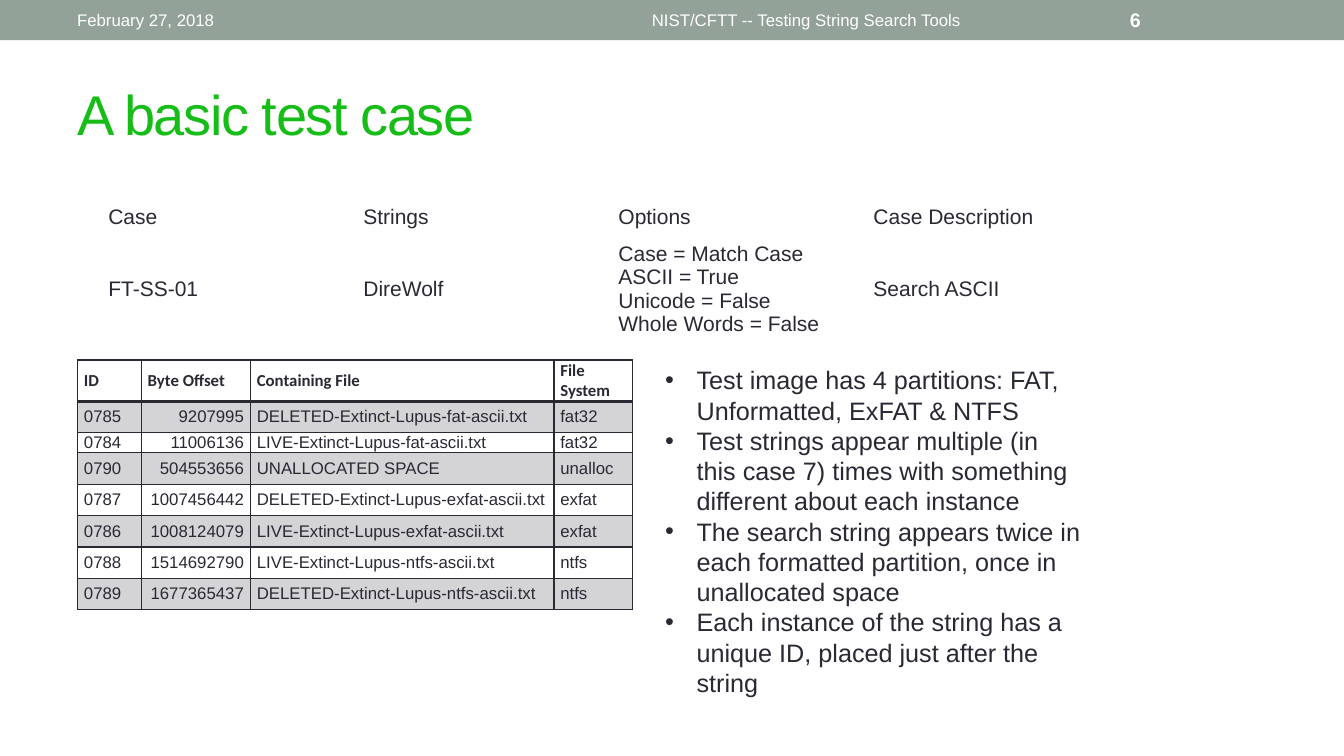
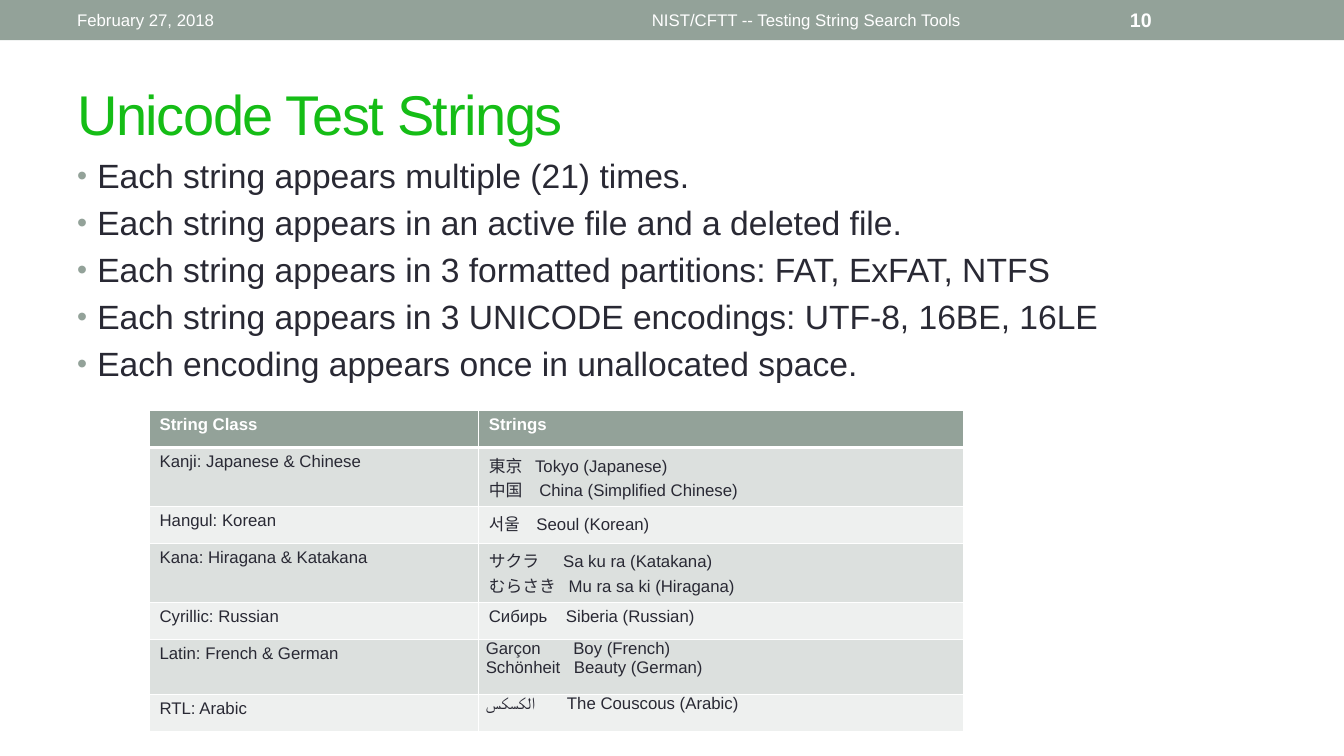
"""Two slides on testing string search tools: a basic case and Unicode strings."""
from lxml.etree import SubElement as Sub
from pptx import Presentation
from pptx.dml.color import RGBColor
from pptx.enum.shapes import MSO_SHAPE as Shape
from pptx.enum.text import MSO_ANCHOR as Anchor, PP_ALIGN as Align
from pptx.oxml.ns import qn
from pptx.util import Pt

INK, SAGE, GREEN, WHITE = "292934", "93A299", "15BD16", "FFFFFF"
GRAY, DARK, PALE = "D4D4D6", "DCE0DE", "EEF0EF"


def hue(code):
    return RGBColor.from_string(code)


def write(frame, lines, size, color=INK, bold=False, font="Arial", align=Align.LEFT,
          lead=None, gap=0, hang=0, dot=None, track=0):
    frame.word_wrap = True
    for i, line in enumerate(lines):
        text, stop = line if isinstance(line, tuple) else (line, None)
        para = frame.paragraphs[0] if i == 0 else frame.add_paragraph()
        props = para._p.get_or_add_pPr()
        if hang:
            props.set("marL", str(Pt(hang)))
            props.set("indent", str(-Pt(hang)))
            if dot:
                Sub(Sub(props, qn("a:buClr")), qn("a:srgbClr"), val=dot)
                Sub(props, qn("a:buSzPct"), val="85000")
            Sub(props, qn("a:buFont"), typeface="Arial")
            Sub(props, qn("a:buChar"), char="•")
        if stop:
            Sub(Sub(props, qn("a:tabLst")), qn("a:tab"), pos=str(Pt(stop)), algn="l")
        para.alignment = align
        if lead:
            para.line_spacing = Pt(lead)
        if i and gap:
            para.space_before = Pt(gap)
        run = para.add_run()
        run.text = text
        run.font.size, run.font.bold, run.font.name = Pt(size), bold, font
        run.font.color.rgb = hue(color)
        if track:
            run._r.get_or_add_rPr().set("spc", str(track))


cases = [
    ["Case", "Strings", "Options", "Case Description"],
    ["FT-SS-01", "DireWolf",
     ["Case = Match Case", "ASCII = True", "Unicode = False", "Whole Words = False"],
     "Search ASCII"],
]
hits = [
    ["ID", "Byte Offset", "Containing File", "File System"],
    ["0785", "9207995", "DELETED-Extinct-Lupus-fat-ascii.txt", "fat32"],
    ["0784", "11006136", "LIVE-Extinct-Lupus-fat-ascii.txt", "fat32"],
    ["0790", "504553656", "UNALLOCATED SPACE", "unalloc"],
    ["0787", "1007456442", "DELETED-Extinct-Lupus-exfat-ascii.txt", "exfat"],
    ["0786", "1008124079", "LIVE-Extinct-Lupus-exfat-ascii.txt", "exfat"],
    ["0788", "1514692790", "LIVE-Extinct-Lupus-ntfs-ascii.txt", "ntfs"],
    ["0789", "1677365437", "DELETED-Extinct-Lupus-ntfs-ascii.txt", "ntfs"],
]
words = [
    ["String Class", "Strings"],
    ["Kanji: Japanese & Chinese",
     [("東京\tTokyo (Japanese)", 33), ("中国\tChina (Simplified Chinese)", 36)]],
    ["Hangul: Korean", [("서울\tSeoul (Korean)", 34)]],
    ["Kana: Hiragana & Katakana",
     [("サクラ\tSa ku ra (Katakana)", 53), ("むらさき\tMu ra sa ki (Hiragana)", 57)]],
    ["Cyrillic: Russian", [("Сибирь\tSiberia (Russian)", 55)]],
    ["Latin: French & German",
     [("Garçon\tBoy (French)", 62.5), ("Schönheit\tBeauty (German)", 63)]],
    ["RTL: Arabic", [("الكسكس\tThe Couscous (Arabic)", 58)]],
]
facts = [
    "Test image has 4 partitions: FAT, Unformatted, ExFAT & NTFS",
    "Test strings appear multiple (in this case 7) times with something different "
    "about each instance",
    "The search string appears twice in each formatted partition, once in "
    "unallocated space",
    "Each instance of the string has a unique ID, placed just after the string",
]
rules = [
    "Each string appears multiple (21) times.",
    "Each string appears in an active file and a deleted file.",
    "Each string appears in 3 formatted partitions: FAT, ExFAT, NTFS",
    "Each string appears in 3 UNICODE encodings: UTF-8, 16BE, 16LE",
    "Each encoding appears once in unallocated space.",
]

plain = dict(rows=cases, left=71.4, top=142.6, wide=[182.2] * 4, high=[24.5, 79],
             pad=(6, 3), mid=True, fills=[None], edge=None,
             head=dict(size=15), body=dict(size=15, lead=16.7))
found = dict(rows=hits, left=55.4, top=257.2, wide=[45.5, 78, 216.8, 56],
             high=[29.5, 22.4, 13.6] + [22.4] * 5, pad=(4.6, 0), mid=True,
             fills=[None, GRAY], edge=(INK, 1, 2), right=1,
             head=dict(size=12, bold=True, font="Calibri"), body=dict(size=12))
script = dict(rows=words, left=106.8, top=293.2, wide=[235.2, 346],
              high=[26.5, 42, 26.5, 42, 26.5, 39.5, 26.5], pad=(7.2, 3.6), mid=False,
              fills=[PALE, DARK], top_fill=SAGE, edge=(WHITE, 1, 3), tight=5,
              head=dict(size=12, bold=True, color=WHITE), body=dict(size=12))

pages = [
    ("A basic test case", "6", (468, 257, 312.5, 269), facts,
     dict(size=18, lead=21.6, hang=22.5), [plain, found]),
    ("Unicode Test Strings", "10", (48, 107.2, 752, 384), rules,
     dict(size=24, lead=28.8, gap=4.8, hang=14.4, dot=SAGE), [script]),
]

deck = Presentation()
deck.slide_width, deck.slide_height = Pt(960), Pt(540)

for title, number, area, points, look, grids in pages:
    slide = deck.slides.add_slide(deck.slide_layouts[6])
    band = slide.shapes.add_shape(Shape.RECTANGLE, 0, 0, Pt(960), Pt(28.8))
    band.shadow.inherit = False
    band.fill.solid()
    band.fill.fore_color.rgb = hue(SAGE)
    band.line.fill.background()

    texts = [
        ((48, 42, 864, 78), [title], dict(size=40, color=GREEN, track=-100), True),
        ((48, 1.4, 304, 26), ["February 27, 2018"], dict(size=12, color=WHITE), True),
        ((360, 1.4, 432, 26), ["NIST/CFTT -- Testing String Search Tools"],
         dict(size=12, color=WHITE, align=Align.CENTER), True),
        ((800, 1.4, 112, 26), [number], dict(size=14, color=WHITE, bold=True), True),
        (area, points, look, False),
    ]
    for box, lines, style, mid in texts:
        frame = slide.shapes.add_textbox(*map(Pt, box)).text_frame
        frame.vertical_anchor = Anchor.MIDDLE if mid else Anchor.TOP
        write(frame, lines, **style)

    for grid in grids:
        rows, wide, high = grid["rows"], grid["wide"], grid["high"]
        table = slide.shapes.add_table(
            len(rows), len(wide), Pt(grid["left"]), Pt(grid["top"]),
            Pt(sum(wide)), Pt(sum(high))).table
        table.first_row = table.horz_banding = False
        for col, width in zip(table.columns, wide):
            col.width = Pt(width)
        for r, row in enumerate(rows):
            table.rows[r].height = Pt(high[r])
            for c, value in enumerate(row):
                cell = table.cell(r, c)
                side, rim = grid["pad"]
                if "tight" in grid and c == 1 and r >= len(rows) - 2:
                    side, rim = grid["tight"], 0
                cell.margin_left = cell.margin_right = Pt(side)
                cell.margin_top = cell.margin_bottom = Pt(rim)
                cell.vertical_anchor = Anchor.MIDDLE if grid["mid"] else Anchor.TOP
                style = dict(grid["body"] if r else grid["head"])
                if r and c == grid.get("right"):
                    style["align"] = Align.RIGHT
                write(cell.text_frame, value if isinstance(value, list) else [value],
                      **style)
                if grid["edge"]:
                    color, thin, thick = grid["edge"]
                    for name in ("lnL", "lnR", "lnT", "lnB"):
                        heavy = (r, name) in ((0, "lnB"), (1, "lnT"))
                        line = Sub(cell._tc.get_or_add_tcPr(), qn("a:" + name),
                                   w=str(Pt(thick if heavy else thin)))
                        Sub(Sub(line, qn("a:solidFill")), qn("a:srgbClr"), val=color)
                fills = grid["fills"]
                shade = fills[r % len(fills)] if r else grid.get("top_fill")
                if shade:
                    cell.fill.solid()
                    cell.fill.fore_color.rgb = hue(shade)
                else:
                    cell.fill.background()

deck.save("out.pptx")
